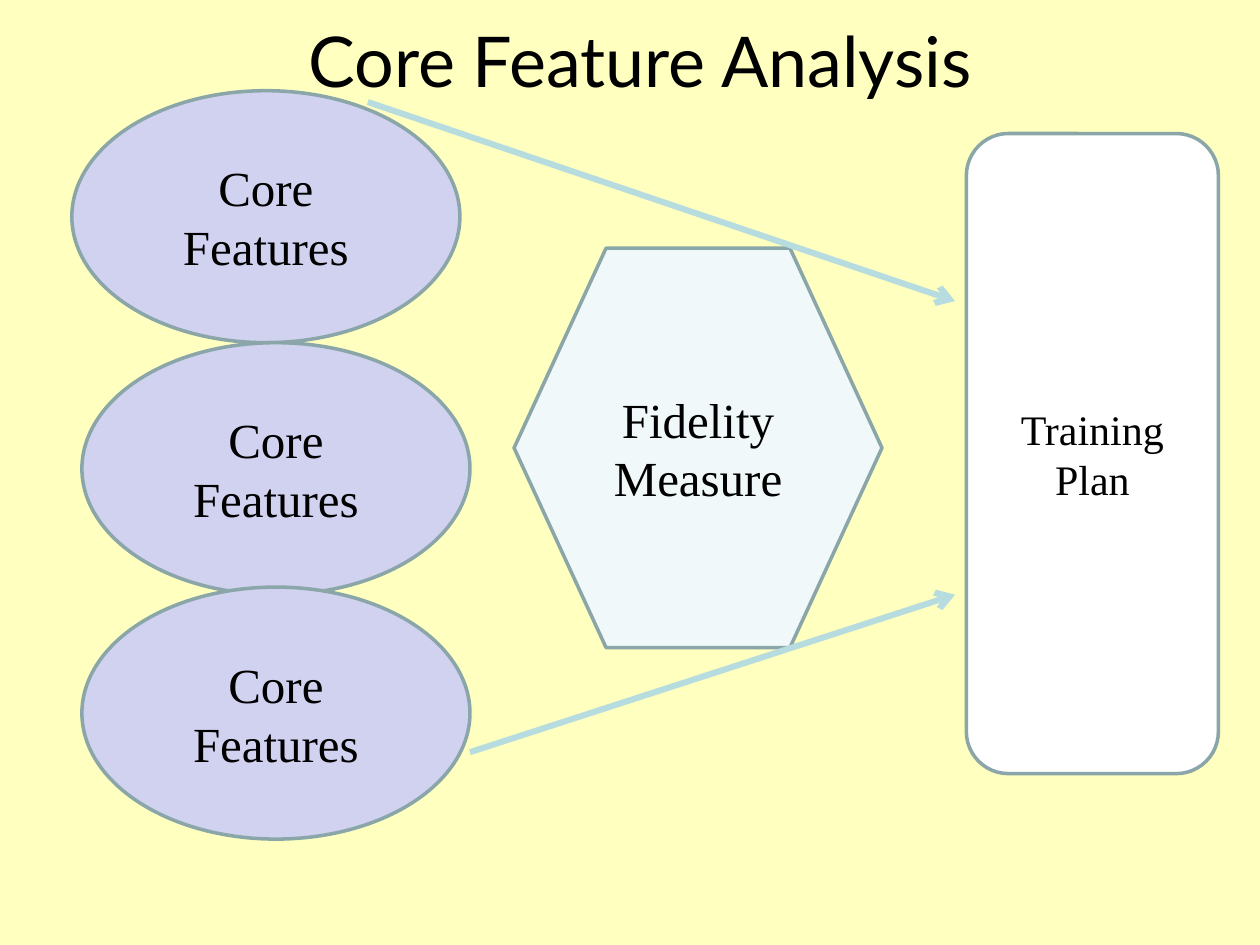
from lxml import etree
from pptx import Presentation
from pptx.dml.color import RGBColor
from pptx.enum import shapes, text
from pptx.oxml.ns import qn
from pptx.util import Inches, Pt

HUES = {
    "page": "FFFFBF",
    "ink": "000000",
    "core": "D1D1F0",
    "gauge": "F0F8F9",
    "plan": "FFFFFF",
    "edge": "8AA6A8",
    "arrow": "B6DCDF",
}
FORM = shapes.MSO_SHAPE


class Deck:
    def __init__(self):
        self.prs = Presentation()
        self.prs.slide_width = Inches(10)
        self.prs.slide_height = Inches(7.5)
        self.slide = self.prs.slides.add_slide(self.prs.slide_layouts[6])
        self.paint(self.slide.background.fill, "page")

    def hue(self, name):
        return RGBColor.from_string(HUES[name])

    def paint(self, fill, name):
        fill.solid()
        fill.fore_color.rgb = self.hue(name)

    def stroke(self, line, name, width):
        self.paint(line.fill, name)
        line.width = Pt(width)

    def label(self, shape, words, font, size):
        frame = shape.text_frame
        frame.word_wrap = True
        frame.vertical_anchor = text.MSO_ANCHOR.MIDDLE
        frame.text = words
        for para in frame.paragraphs:
            para.alignment = text.PP_ALIGN.CENTER
            para.font.name = font
            para.font.size = Pt(size)
            para.font.color.rgb = self.hue("ink")

    def title(self, words, *box):
        shape = self.slide.shapes.add_textbox(*map(Inches, box))
        self.label(shape, words, "Lato", 40)

    def block(self, form, words, fill, size, *box):
        shape = self.slide.shapes.add_shape(form, *map(Inches, box))
        shape.shadow.inherit = False
        self.paint(shape.fill, fill)
        self.stroke(shape.line, "edge", 2)
        self.label(shape, words, "Times New Roman", size)

    def arrow(self, *ends):
        link = self.slide.shapes.add_connector(
            shapes.MSO_CONNECTOR.STRAIGHT, *map(Inches, ends))
        self.stroke(link.line, "arrow", 3.5)
        props = link._element.spPr
        etree.SubElement(props.find(qn("a:ln")), qn("a:tailEnd"), type="arrow")
        etree.SubElement(props, qn("a:effectLst"))


def main():
    deck = Deck()
    deck.title("Core Feature Analysis", 0.58, -0.4, 9, 1.75)
    for left, top in ((0.57, 0.72), (0.65, 2.72), (0.65, 4.66)):
        deck.block(FORM.OVAL, "Core Features", "core", 28, left, top, 3.08, 2)
    deck.block(FORM.HEXAGON, "Fidelity\nMeasure", "gauge", 28, 4.08, 1.97, 2.92, 3.17)
    deck.block(FORM.ROUNDED_RECTANGLE, "Training Plan", "plan", 24, 7.67, 1.06, 2, 5.08)
    deck.arrow(2.92, 0.81, 7.58, 2.39)
    deck.arrow(3.73, 5.97, 7.58, 4.72)
    deck.prs.save("out.pptx")


if __name__ == "__main__":
    main()
